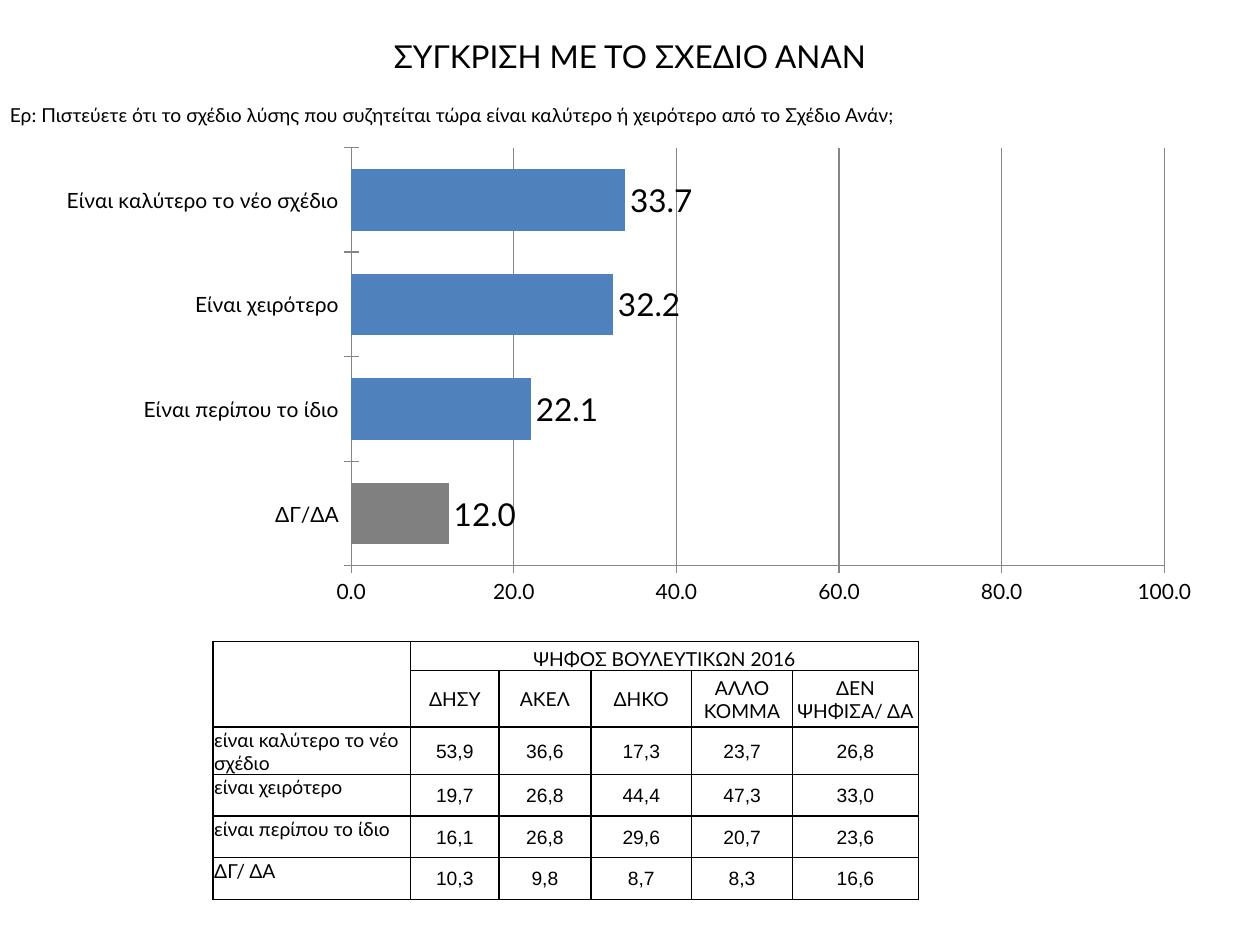
from lxml import etree
from pptx import Presentation
from pptx.chart.data import CategoryChartData
from pptx.dml.color import RGBColor
from pptx.enum.chart import XL_CHART_TYPE as ChartType, XL_LABEL_POSITION as LabelPosition, XL_TICK_MARK as TickMark
from pptx.enum.text import MSO_ANCHOR as Anchor, PP_ALIGN as Align
from pptx.oxml import parse_xml
from pptx.oxml.ns import nsdecls, qn
from pptx.util import Inches, Pt

BLACK = RGBColor(0x00, 0x00, 0x00)
BLUE = RGBColor(0x4F, 0x81, 0xBD)
GREY = RGBColor(0x80, 0x80, 0x80)
AXIS_GREY = RGBColor(0x86, 0x86, 0x86)
NUMBER_FORMAT = "###0.0"

ANSWERS = [
    ("ΔΓ/ΔΑ", 12.0),
    ("Είναι περίπου το ίδιο", 22.1),
    ("Είναι χειρότερο", 32.2),
    ("Είναι καλύτερο το νέο σχέδιο", 33.7),
]
PARTIES = ["ΔΗΣΥ", "ΑΚΕΛ", "ΔΗΚΟ", "ΑΛΛΟ ΚΟΜΜΑ", "ΔΕΝ ΨΗΦΙΣΑ/ ΔΑ"]
VOTES = [
    ["είναι καλύτερο το νέο σχέδιο", "53,9", "36,6", "17,3", "23,7", "26,8"],
    ["είναι χειρότερο", "19,7", "26,8", "44,4", "47,3", "33,0"],
    ["είναι περίπου το ίδιο", "16,1", "26,8", "29,6", "20,7", "23,6"],
    ["ΔΓ/ ΔΑ", "10,3", "9,8", "8,7", "8,3", "16,6"],
]
COLUMN_WIDTHS = [1.57, 0.7, 0.73, 0.8, 0.8, 1]
ROW_HEIGHTS = [0.23, 0.45] + [0.33] * len(VOTES)


def style_font(font, size, name="Lato"):
    font.size = Pt(size)
    font.name = name
    font.bold = False
    font.color.rgb = BLACK


def set_text(frame, text, size, align, name="Lato"):
    frame.text = text
    para = frame.paragraphs[0]
    para.alignment = align
    for span in para.runs:
        style_font(span.font, size, name)


def place_heading(shape, box, text, size, align):
    shape.left, shape.top, shape.width, shape.height = box
    frame = shape.text_frame
    frame.word_wrap = True
    frame.vertical_anchor = Anchor.MIDDLE
    set_text(frame, text, size, align)


def set_plot_area(chart, x, y, width, height):
    plot_area = chart._chartSpace.chart.plotArea
    for old in plot_area.findall(qn("c:layout")):
        plot_area.remove(old)
    layout = parse_xml(f"<c:layout {nsdecls('c')}><c:manualLayout/></c:layout>")
    settings = [("layoutTarget", "inner"), ("xMode", "edge"), ("yMode", "edge"),
                ("x", x), ("y", y), ("w", width), ("h", height)]
    for tag, value in settings:
        etree.SubElement(layout[0], qn(f"c:{tag}")).set("val", str(value))
    plot_area.insert(0, layout)


def add_answer_chart(page, box):
    data = CategoryChartData(number_format=NUMBER_FORMAT)
    data.categories = [answer for answer, _ in ANSWERS]
    data.add_series("Series 1", [share for _, share in ANSWERS])
    chart = page.shapes.add_chart(ChartType.BAR_CLUSTERED, *box, data).chart
    chart.has_title = False
    chart.has_legend = False
    style_font(chart.font, 18, "TeX Gyre Pagella")
    set_plot_area(chart, 0.26, 0.06, 0.7, 0.86)

    for axis in (chart.category_axis, chart.value_axis):
        axis.major_tick_mark = TickMark.CROSS
        axis.format.line.color.rgb = AXIS_GREY
        style_font(axis.tick_labels.font, 12)
    scale = chart.value_axis
    scale.minimum_scale, scale.maximum_scale, scale.major_unit = 0, 100, 20
    scale.has_major_gridlines = True
    scale.major_gridlines.format.line.color.rgb = AXIS_GREY
    scale.tick_labels.number_format = NUMBER_FORMAT
    scale.tick_labels.number_format_is_linked = False

    plot = chart.plots[0]
    plot.gap_width = 70
    plot.vary_by_categories = False
    series = plot.series[0]
    for part, color in ((series, BLUE), (series.points[0], GREY)):
        part.format.fill.solid()
        part.format.fill.fore_color.rgb = color
    labels = series.data_labels
    labels.show_value = True
    labels.position = LabelPosition.OUTSIDE_END
    labels.number_format = NUMBER_FORMAT
    labels.number_format_is_linked = False
    style_font(labels.font, 18)


def format_cell(cell):
    cell.margin_left = cell.margin_top = cell.margin_right = Inches(0.01)
    cell.margin_bottom = 0
    cell.fill.background()
    properties = cell._tc.get_or_add_tcPr()
    for index, side in enumerate(("lnL", "lnR", "lnT", "lnB")):
        properties.insert(index, parse_xml(
            f'<a:{side} {nsdecls("a")} w="{Pt(1)}"><a:solidFill>'
            f'<a:srgbClr val="{BLACK}"/></a:solidFill></a:{side}>'))


def add_vote_table(page, box):
    rows = [["", "ΨΗΦΟΣ ΒΟΥΛΕΥΤΙΚΩΝ 2016", "", "", "", ""], [""] + PARTIES] + VOTES
    table = page.shapes.add_table(len(rows), len(COLUMN_WIDTHS), *box).table
    table.first_row = table.horz_banding = False
    for column, width in zip(table.columns, COLUMN_WIDTHS):
        column.width = Inches(width)
    for row, height in zip(table.rows, ROW_HEIGHTS):
        row.height = Inches(height)
    for i, texts in enumerate(rows):
        for j, text in enumerate(texts):
            cell = table.cell(i, j)
            format_cell(cell)
            is_value = i > 1 and j > 0
            set_text(cell.text_frame, text, 11, Align.CENTER if j else Align.LEFT,
                     "Arial" if is_value else "Lato")
            if j:
                cell.vertical_anchor = Anchor.MIDDLE if i else Anchor.BOTTOM
    table.cell(0, 0).merge(table.cell(1, 0))
    table.cell(0, 1).merge(table.cell(0, len(PARTIES)))


def inches(*lengths):
    return [Inches(length) for length in lengths]


def main():
    deck = Presentation()
    deck.slide_width, deck.slide_height = inches(10, 7.5)
    page = deck.slides.add_slide(deck.slide_layouts[5])
    question_box = inches(-0.02, 0.76, 10, 0.3)
    question = page.shapes.add_textbox(*question_box)
    place_heading(question, question_box,
                  "Ερ: Πιστεύετε ότι το σχέδιο λύσης που συζητείται τώρα είναι "
                  "καλύτερο ή χειρότερο από το Σχέδιο Ανάν;", 11, Align.LEFT)
    place_heading(page.shapes.title, inches(0, 0.28, 10, 0.32),
                  "ΣΥΓΚΡΙΣΗ ΜΕ ΤΟ ΣΧΕΔΙΟ ΑΝΑΝ", 18, Align.CENTER)
    add_vote_table(page, inches(1.69, 5.09, sum(COLUMN_WIDTHS), sum(ROW_HEIGHTS)))
    add_answer_chart(page, inches(0.39, 0.94, 9.22, 3.86))
    deck.save("out.pptx")


if __name__ == "__main__":
    main()
